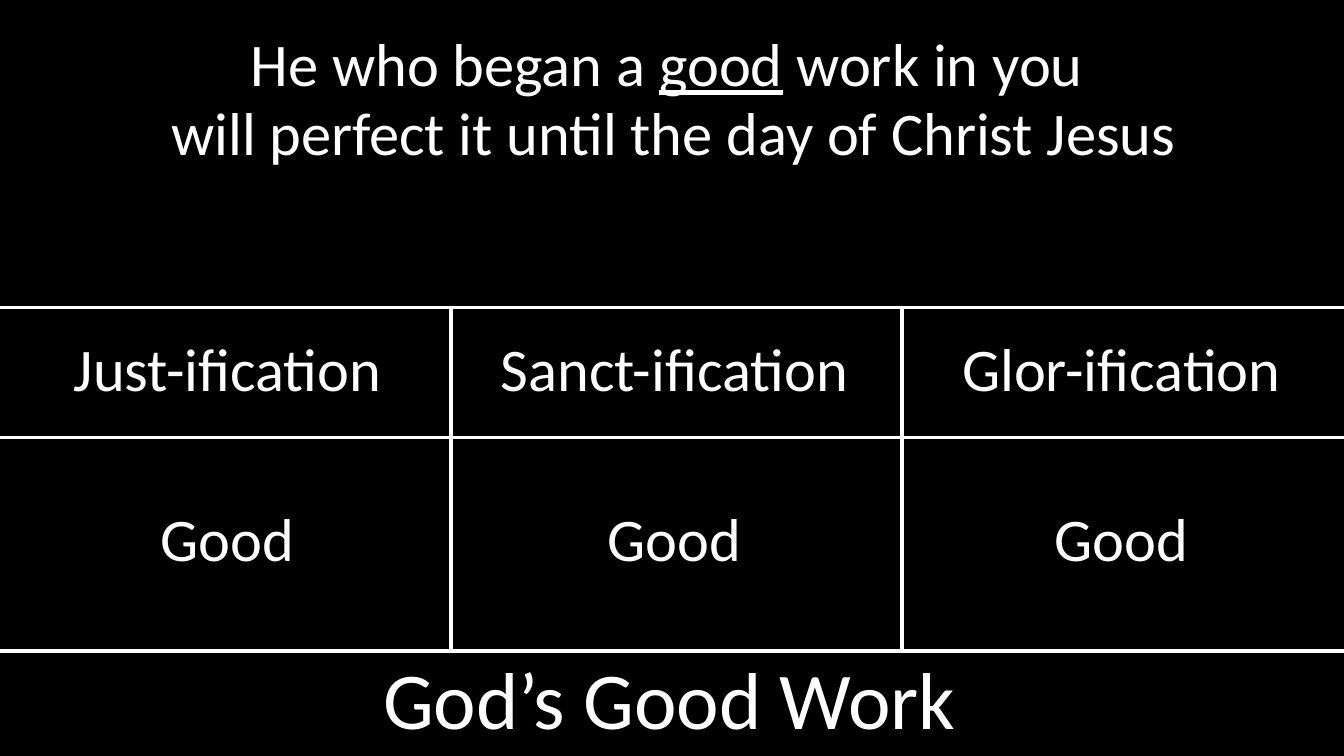
from lxml import etree
from pptx import Presentation
from pptx.dml.color import RGBColor
from pptx.enum.shapes import MSO_CONNECTOR as CONN
from pptx.enum.text import MSO_ANCHOR as ANCHOR, MSO_AUTO_SIZE as AUTO, PP_ALIGN as ALIGN
from pptx.oxml.ns import qn
from pptx.util import Pt

W, H = 800, 450
TABLE_TOP, HEADER_BOTTOM, TABLE_BOTTOM = 183, 260.5, 387.5
COL_W = 268.5


def rgb(value):
    return RGBColor.from_string(value)


class Board:
    font, ink, paper = "Calibri", "FFFFFF", "000000"

    def __init__(self, prs):
        self.s = prs.slides.add_slide(prs.slide_layouts[1])
        fill = self.s.background.fill
        fill.solid()
        fill.fore_color.rgb = rgb(self.paper)

    def set_text(self, sp, box, parts, size=36, anchor=ANCHOR.MIDDLE, spacing=0.95):
        """Place sp and fill it with one centred paragraph of (text, underlined) parts."""
        sp.left, sp.top, sp.width, sp.height = map(Pt, box)
        tf = sp.text_frame
        tf.word_wrap, tf.auto_size, tf.vertical_anchor = True, AUTO.NONE, anchor
        p = tf.paragraphs[0]
        p.alignment, p.line_spacing, p.space_before = ALIGN.CENTER, spacing, Pt(0)
        p.font.name, p.font.size = self.font, Pt(size)
        p.font.color.rgb = rgb(self.ink)
        for text, underlined in parts:
            for i, line in enumerate(text.split("\n")):
                if i:
                    p.add_line_break()
                r = p.add_run()
                r.text = line
                if underlined:
                    r.font.underline = True
        return p

    def title(self, box, text):
        self.set_text(self.s.shapes.title, box, [(text, False)], size=48, spacing=1.0)

    def body(self, box, parts):
        p = self.set_text(self.s.placeholders[1], box, parts, anchor=ANCHOR.TOP)
        pPr = p._p.get_or_add_pPr()
        pPr.set("marL", "0")
        pPr.set("indent", "0")
        pPr.find(qn("a:spcBef")).addnext(etree.Element(qn("a:buNone")))

    def text(self, box, text):
        self.set_text(self.s.shapes.add_textbox(*map(Pt, box)), box, [(text, False)])

    def line(self, x1, y1, x2, y2):
        cn = self.s.shapes.add_connector(CONN.STRAIGHT, *map(Pt, (x1, y1, x2, y2)))
        cn.line.color.rgb = rgb(self.ink)
        cn.line.width = Pt(2)
        etree.SubElement(cn._element.spPr, qn("a:effectLst"))


def main():
    prs = Presentation()
    prs.slide_width, prs.slide_height = Pt(W), Pt(H)
    board = Board(prs)
    board.title((5, 387.5, 787, 55), "God’s Good Work")
    board.body((11, 15, 780, 122), [
        ("He who began a ", False),
        ("good", True),
        (" work in you \nwill perfect it until the day of Christ Jesus", False),
    ])

    for y in (TABLE_TOP, HEADER_BOTTOM, TABLE_BOTTOM):
        board.line(0, y, W, y)
    for col in (1, 2):
        board.line(col * COL_W, TABLE_TOP, col * COL_W, TABLE_BOTTOM)

    for col, stage in enumerate(("Just-ification", "Sanct-ification", "Glor-ification")):
        x = 1 + col * 266
        board.text((x, 181.5, 269, 78), stage)
        board.text((x, 259, 269, 125.5), "Good")
    prs.save("out.pptx")


if __name__ == "__main__":
    main()
